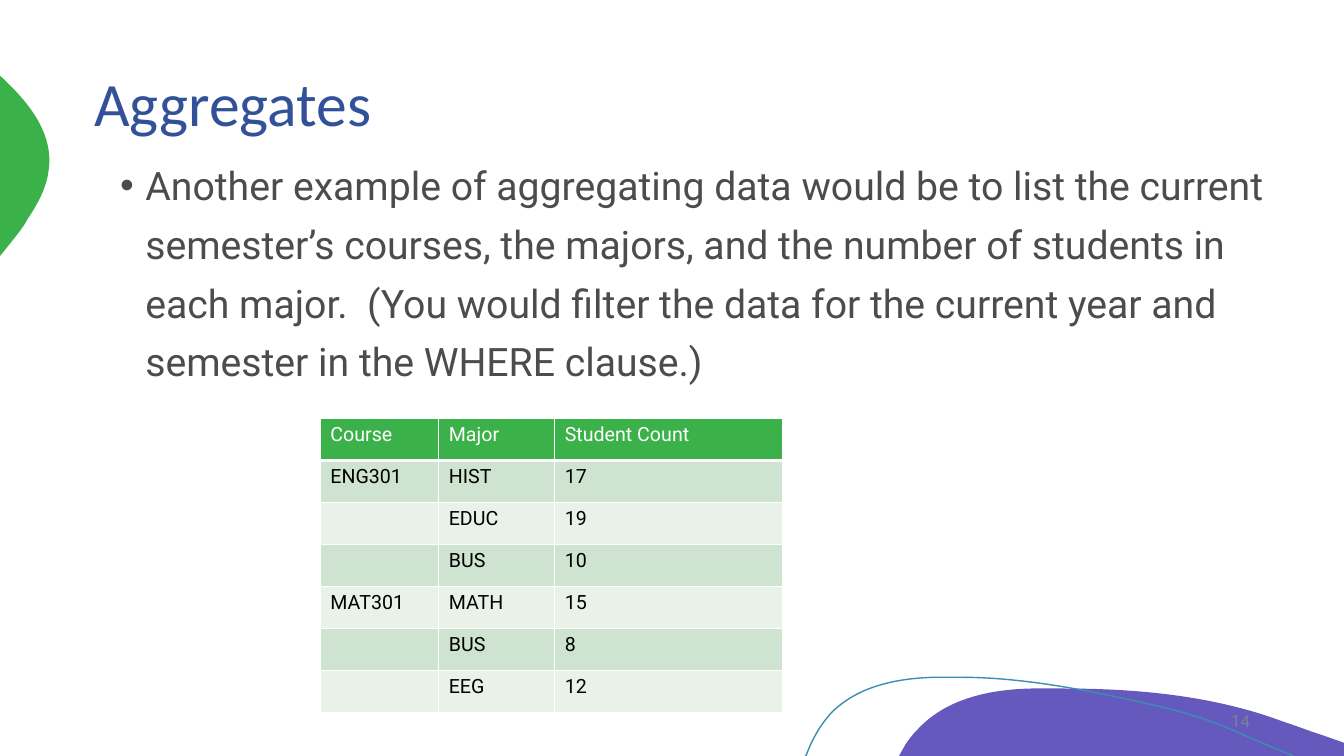
from pptx import Presentation
from pptx.dml.color import RGBColor
from pptx.enum.text import MSO_ANCHOR, PP_ALIGN
from pptx.oxml.ns import qn
from pptx.oxml.xmlchemy import OxmlElement
from pptx.util import Pt

TOP, MIDDLE = MSO_ANCHOR.TOP, MSO_ANCHOR.MIDDLE
LEFT, RIGHT = PP_ALIGN.LEFT, PP_ALIGN.RIGHT

COLORS = {
    "purple": "6659BD", "green": "3BB149", "teal": "3B8EB1", "title": "335199",
    "black": "000000", "gray": "8C8C8C", "white": "FFFFFF",
    "band_dark": "CEE4D0", "band_light": "E8F2E9",
}

# Each outline: a start point, then line ends (2 numbers) or Bézier curves (6)
PURPLE_WAVE = [
    (758.9, 491.8),
    (812.2, 491.8, 866.9, 496.8, 916.6, 515.5),
    (925.9, 518.4, 934.6, 522, 943.9, 524.9),
    (960, 530.6), (960, 540), (642.2, 540), (646.6, 532.1),
    (649.4, 527.8, 652.3, 524.2, 655.9, 520.6),
    (676.1, 499, 707, 492.5, 736.6, 491.8),
    (743.8, 491.8, 751, 491.8, 758.9, 491.8),
]
GREEN_BULGE = [
    (0, 54), (0.7, 54.7),
    (20.9, 73.4, 38.9, 95.8, 34.6, 122.4),
    (33.1, 134.6, 26.6, 146.2, 19.4, 157),
    (17.3, 161.3, 12.2, 167.8, 5.8, 175.7),
    (0, 182.9),
]
TEAL_CURVE = [
    (575.3, 540), (576, 539.3),
    (580.3, 527.8, 586.1, 517.7, 593.3, 509.8),
    (612, 490.3, 640.1, 484.6, 666.7, 483.8),
    (687.6, 483.8),
    (735.8, 483.8, 792, 496.1, 831.6, 505.4),
    (870.5, 514.8, 882.7, 523.4, 923.8, 540),
]

BODY = (
    "Another example of aggregating data would be to list the current "
    "semester’s courses, the majors, and the number of students in each major.  "
    "(You would filter the data for the current year and semester in the WHERE clause.)"
)
ROWS = [
    ("Course", "Major", "Student Count"),
    ("ENG301", "HIST", "17"),
    ("", "EDUC", "19"),
    ("", "BUS", "10"),
    ("MAT301", "MATH", "15"),
    ("", "BUS", "8"),
    ("", "EEG", "12"),
]
COLUMN_WIDTHS = (84.6, 82.8, 162.6)
ROW_HEIGHT = 30
HEADER_BORDERS = {"lnL": 1, "lnR": 1, "lnT": 1, "lnB": 3}


def rgb(name):
    return RGBColor.from_string(COLORS[name])


def bend_segments(sp, outline):
    """Replace the straight segments that should be Bézier curves."""
    for line_to, segment in zip(list(sp._element.iter(qn("a:lnTo"))), outline[1:]):
        if len(segment) == 2:
            continue
        curve = OxmlElement("a:cubicBezTo")
        for x, y in zip(segment[::2], segment[1::2]):
            pt = OxmlElement("a:pt")
            pt.set("x", str(Pt(x) - sp.left))
            pt.set("y", str(Pt(y) - sp.top))
            curve.append(pt)
        line_to.getparent().replace(line_to, curve)


def add_outline(s, outline, fill=None, line=None):
    points = [(Pt(segment[-2]), Pt(segment[-1])) for segment in outline]
    builder = s.shapes.build_freeform(*points[0])
    builder.add_line_segments(points[1:], close=fill is not None)
    sp = builder.convert_to_shape()
    bend_segments(sp, outline)
    sp.shadow.inherit = False
    if fill:
        sp.fill.solid()
        sp.fill.fore_color.rgb = rgb(fill)
    else:
        sp.fill.background()
    if line:
        sp.line.color.rgb = rgb(line)
        sp.line.width = Pt(1)
    else:
        sp.line.fill.background()


def format_run(r, font, size, color, opacity=100):
    r.font.name = font
    r.font.size = Pt(size)
    r.font.color.rgb = rgb(color)
    if opacity < 100:
        alpha = OxmlElement("a:alpha")
        alpha.set("val", str(opacity * 1000))
        r.font.fill._xPr.solidFill.srgbClr.append(alpha)


def add_text(s, box, text, font, size, color, opacity=100, anchor=MIDDLE, align=LEFT):
    """Add a one-paragraph text box and return the paragraph."""
    tf = s.shapes.add_textbox(*map(Pt, box)).text_frame
    tf.word_wrap = True
    tf.vertical_anchor = anchor
    p = tf.paragraphs[0]
    p.text = text
    p.alignment = align
    format_run(p.runs[0], font, size, color, opacity)
    return p


def add_bullet(p, indent):
    pPr = p._p.get_or_add_pPr()
    pPr.set("marL", str(Pt(indent)))
    pPr.set("indent", str(-Pt(indent)))
    font = OxmlElement("a:buFont")
    font.set("typeface", "Arial")
    char = OxmlElement("a:buChar")
    char.set("char", "•")
    pPr.extend([font, char])


def add_header_borders(cell):
    tcPr = cell._tc.get_or_add_tcPr()
    for side, width in HEADER_BORDERS.items():
        ln = OxmlElement(f"a:{side}")
        ln.set("w", str(Pt(width)))
        fill = OxmlElement("a:solidFill")
        clr = OxmlElement("a:srgbClr")
        clr.set("val", COLORS["white"])
        fill.append(clr)
        ln.append(fill)
        tcPr.append(ln)


def add_course_table(s, left, top):
    table = s.shapes.add_table(
        len(ROWS), len(COLUMN_WIDTHS), Pt(left), Pt(top),
        Pt(sum(COLUMN_WIDTHS)), Pt(ROW_HEIGHT * len(ROWS))).table
    for column, width in zip(table.columns, COLUMN_WIDTHS):
        column.width = Pt(width)
    for i, values in enumerate(ROWS):
        table.rows[i].height = Pt(ROW_HEIGHT)
        band = "band_dark" if i % 2 else "band_light"
        for j, value in enumerate(values):
            cell = table.cell(i, j)
            if i == 0:
                add_header_borders(cell)
            cell.fill.solid()
            cell.fill.fore_color.rgb = rgb(band if i else "green")
            if value:
                cell.text = value
                r = cell.text_frame.paragraphs[0].runs[0]
                format_run(r, "Roboto", 14, "black" if i else "white")
                r.font.bold = False


def main():
    prs = Presentation()
    prs.slide_width, prs.slide_height = Pt(960), Pt(540)
    s = prs.slides.add_slide(prs.slide_layouts[6])

    add_outline(s, PURPLE_WAVE, fill="purple")
    add_outline(s, GREEN_BULGE, fill="green")
    add_outline(s, TEAL_CURVE, line="teal")

    title = add_text(s, (60.3, 16, 840, 120), "Aggregates", "Calibri", 44, "title")
    title.line_spacing = 0.9
    body = add_text(s, (78.8, 103.2, 840, 301), BODY, "Roboto", 28, "black", 70, TOP)
    body.line_spacing = 1.25
    body.space_before = Pt(10)
    add_bullet(body, 18)
    add_text(s, (780, 500.5, 120, 28.8), "14", "Roboto", 12, "gray", 70, align=RIGHT)

    add_course_table(s, 228.8, 299)
    prs.save("out.pptx")


if __name__ == "__main__":
    main()
